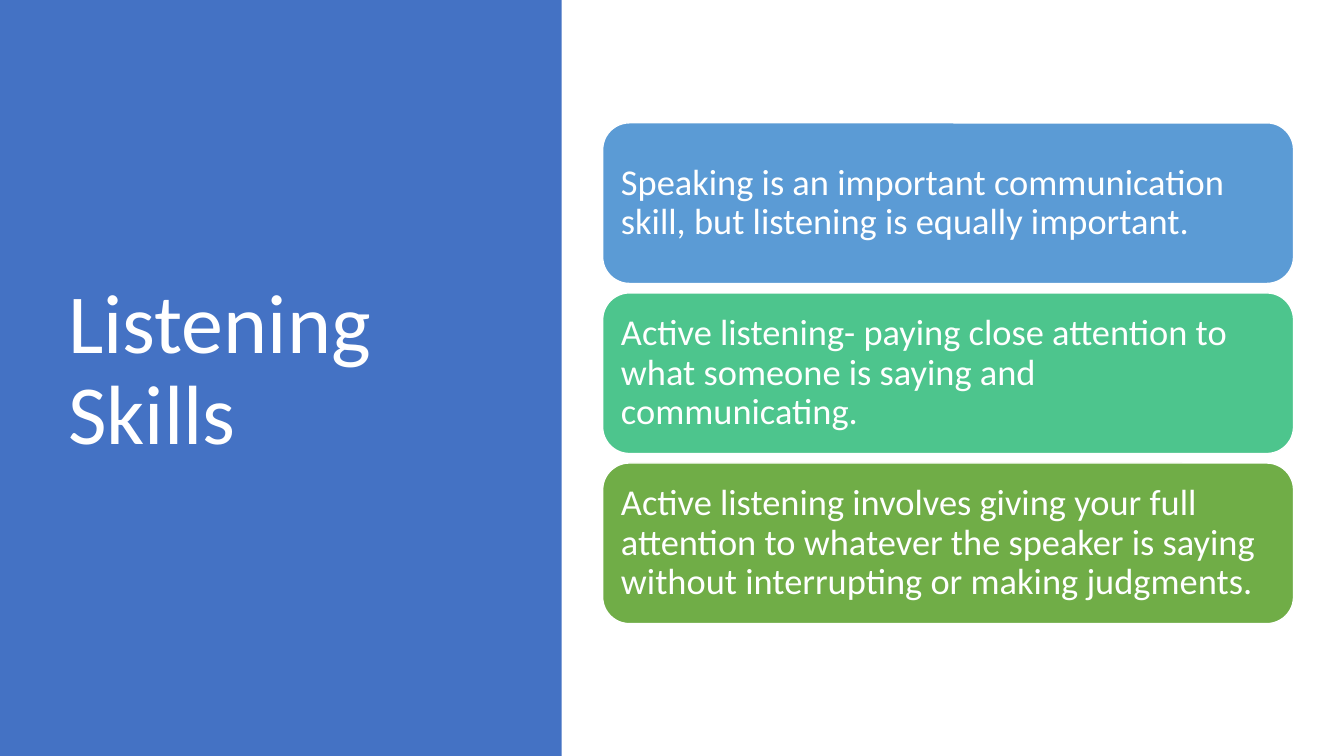
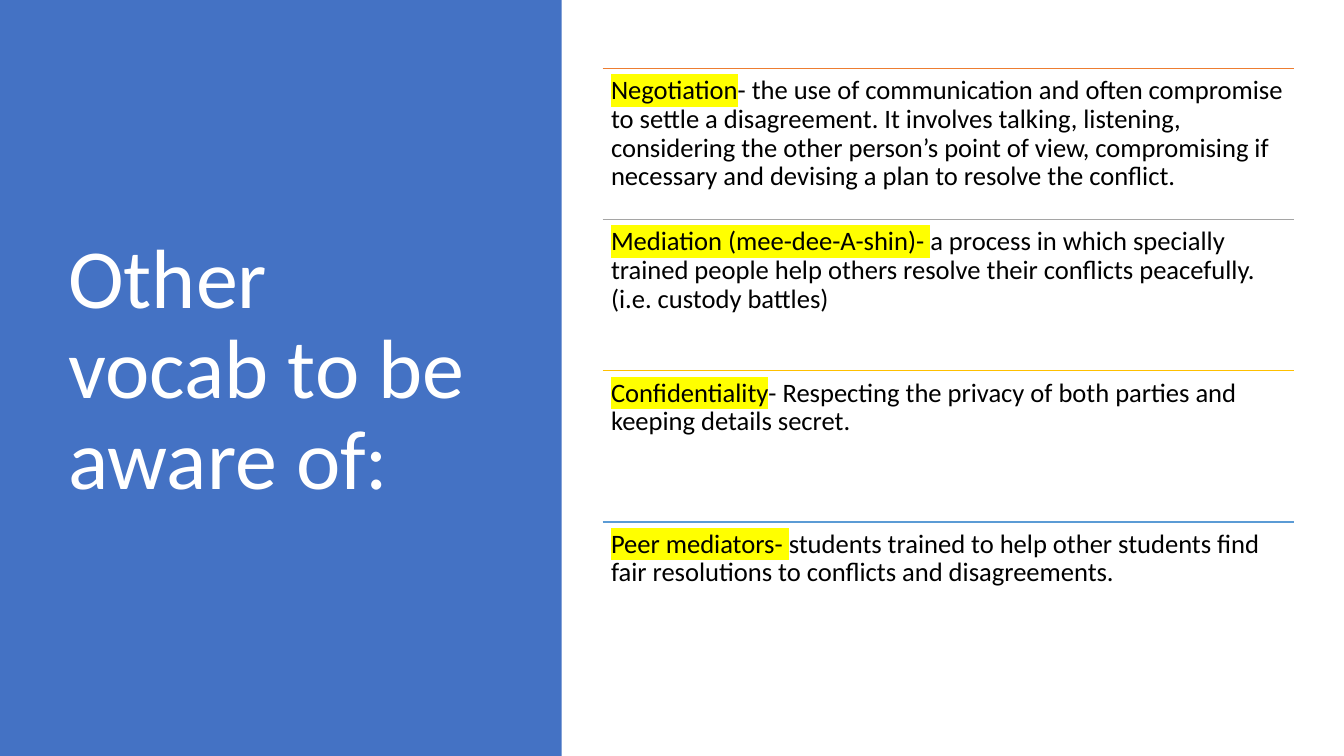
from lxml.etree import SubElement, Element
from pptx import Presentation
from pptx.dml.color import RGBColor
from pptx.enum.shapes import MSO_CONNECTOR as Connector, MSO_SHAPE as Shape
from pptx.enum.text import MSO_ANCHOR as Anchor, PP_ALIGN as Align
from pptx.oxml.ns import qn
from pptx.util import Emu, Pt

SLIDE_WIDTH, SLIDE_HEIGHT = 1280, 720
PANEL_WIDTH = 535
CONTENT_LEFT, CONTENT_WIDTH = 574, 658
CARD_TOP, CARD_HEIGHT, CARD_GAP = 117, 153, 9
ENTRY_TOP, ENTRY_HEIGHT = 65, 144

FONT = "Calibri"
WHITE, BLACK, YELLOW = "FFFFFF", "000000", "FFFF00"
PANEL_BLUE, LIGHT_BLUE = "4472C4", "5B9BD5"
TITLE_STYLE = {"size": Pt(60), "name": FONT}
CARD_STYLE = {"size": Pt(26), "name": FONT}
ENTRY_STYLE = {"size": Pt(19), "name": FONT}

CARDS = [
    ("4DC58D", "Active listening- paying close attention to what someone is saying and communicating."),
    ("70AD47", "Active listening involves giving your full attention to whatever the speaker is saying "
               "without interrupting or making judgments."),
]
CARDS.insert(0, (LIGHT_BLUE, "Speaking is an important communication skill, but listening is equally important."))

ENTRIES = [
    ("ED7D31", "Negotiation",
     "- the use of communication and often compromise to settle a disagreement. It involves talking, "
     "listening, considering the other person’s point of view, compromising if necessary and devising "
     "a plan to resolve the conflict."),
    ("A5A5A5", "Mediation (mee-dee-A-shin)- ",
     "a process in which specially trained people help others resolve their conflicts peacefully. "
     "(i.e. custody battles)"),
    ("FFC000", "Confidentiality",
     "- Respecting the privacy of both parties and keeping details secret."),
    (LIGHT_BLUE, "Peer mediators- ",
     "students trained to help other students find fair resolutions to conflicts and disagreements."),
]


def px(length):
    return Emu(length * 9525)


def color(hex_value):
    return RGBColor.from_string(hex_value)


def set_values(target, values):
    for name, value in values.items():
        setattr(target, name, value)


def set_frame(box, anchor, inset_x, inset_y):
    set_values(box.text_frame, {
        "word_wrap": True,
        "vertical_anchor": anchor,
        "margin_left": px(inset_x),
        "margin_right": px(inset_x),
        "margin_top": px(inset_y),
        "margin_bottom": px(inset_y),
    })
    para = box.text_frame.paragraphs[0]
    set_values(para, {"line_spacing": 0.9, "alignment": Align.LEFT})
    return para


def add_span(para, text, style, hex_value, highlight=None):
    span = para.add_run()
    span.text = text
    set_values(span.font, style)
    span.font.color.rgb = color(hex_value)
    if highlight:
        mark = Element(qn("a:highlight"))
        SubElement(mark, qn("a:srgbClr"), val=highlight)
        span.font.fill
        span.font._element.find(qn("a:solidFill")).addnext(mark)


def add_block(page, kind, left, top, width, height, fill, outline=None):
    block = page.shapes.add_shape(kind, px(left), px(top), px(width), px(height))
    block.shadow.inherit = False
    block.fill.solid()
    block.fill.fore_color.rgb = color(fill)
    if outline:
        block.line.color.rgb = color(outline)
        block.line.width = Pt(1)
    else:
        block.line.fill.background()
    return block


def add_text_box(page, left, top, width, height):
    return page.shapes.add_textbox(px(left), px(top), px(width), px(height))


def add_rule(page, top, hex_value):
    rule = page.shapes.add_connector(
        Connector.STRAIGHT, px(CONTENT_LEFT), px(top), px(CONTENT_LEFT + CONTENT_WIDTH), px(top))
    rule.line.color.rgb = color(hex_value)
    rule.line.width = Pt(1)
    SubElement(rule._element.spPr, qn("a:effectLst"))


def add_page(deck, title):
    page = deck.slides.add_slide(deck.slide_layouts[6])
    add_block(page, Shape.RECTANGLE, 0, 0, PANEL_WIDTH, SLIDE_HEIGHT, PANEL_BLUE)
    box = add_text_box(page, 55, 65, 399, 578)
    add_span(set_frame(box, Anchor.MIDDLE, 10, 5), title, TITLE_STYLE, WHITE)
    return page


def add_card(page, index, fill, text):
    top = CARD_TOP + index * (CARD_HEIGHT + CARD_GAP)
    card = add_block(page, Shape.ROUNDED_RECTANGLE, CONTENT_LEFT, top,
                     CONTENT_WIDTH, CARD_HEIGHT, fill, WHITE)
    add_span(set_frame(card, Anchor.MIDDLE, 10, 10), text, CARD_STYLE, WHITE)


def add_entry(page, index, rule_color, term, meaning):
    top = ENTRY_TOP + index * ENTRY_HEIGHT
    add_rule(page, top, rule_color)
    box = add_text_box(page, CONTENT_LEFT, top, CONTENT_WIDTH, ENTRY_HEIGHT)
    para = set_frame(box, Anchor.TOP, 8, 8)
    add_span(para, term, ENTRY_STYLE, BLACK, YELLOW)
    add_span(para, meaning, ENTRY_STYLE, BLACK)


def main():
    deck = Presentation()
    set_values(deck, {"slide_width": px(SLIDE_WIDTH), "slide_height": px(SLIDE_HEIGHT)})

    page = add_page(deck, "Listening Skills")
    for index, card in enumerate(CARDS):
        add_card(page, index, *card)

    page = add_page(deck, "Other vocab to be aware of:")
    for index, entry in enumerate(ENTRIES):
        add_entry(page, index, *entry)

    deck.save("out.pptx")


if __name__ == "__main__":
    main()
